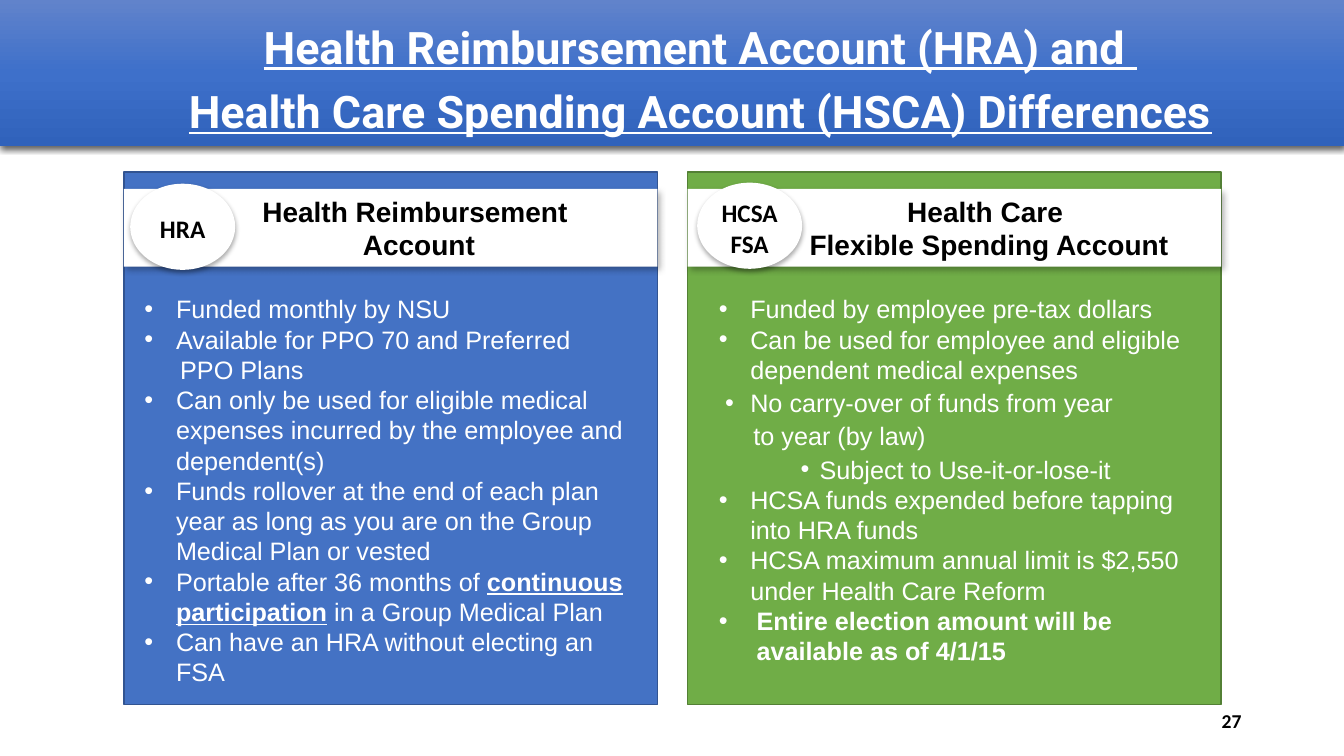
from copy import deepcopy
from dataclasses import dataclass

from lxml.etree import SubElement
from pptx import Presentation
from pptx.dml.color import RGBColor
from pptx.enum.shapes import MSO_SHAPE
from pptx.enum.text import MSO_ANCHOR, MSO_AUTO_SIZE, PP_ALIGN
from pptx.oxml.ns import qn
from pptx.util import Emu, Pt

WHITE, BLACK = "FFFFFF", "000000"
BLUE, BLUE_EDGE = "4472C4", "325491"
GREEN, GREEN_EDGE = "70AD47", "538035"


def px(length):
    return Emu(length * 9525)


def colour(hex_string):
    return RGBColor.from_string(hex_string)


@dataclass
class Item:
    """One list paragraph; words between asterisks are bold and underlined."""
    text: str
    left: int = 30
    hang: int = 30
    spacing: float = 1.0
    bullet: bool = True
    bold: bool = False
    level: int = 0


class SlideBuilder:
    heading_font, body_font, label_font = "Roboto", "Arial", "Calibri"

    def __init__(self, slide):
        self.slide = slide

    def place(self, shape, left, top, width, height):
        shape.left, shape.top = px(left), px(top)
        shape.width, shape.height = px(width), px(height)

    def shadow(self, shape, alpha, blur, distance, angle):
        shape.shadow.inherit = False
        effects = shape._element.spPr.find(qn("a:effectLst"))
        outer = SubElement(effects, qn("a:outerShdw"), blurRad=str(Pt(blur)),
                           dist=str(Pt(distance)), dir=str(angle * 60000),
                           algn="t", rotWithShape="0")
        tint = SubElement(outer, qn("a:srgbClr"), val=BLACK)
        SubElement(tint, qn("a:alpha"), val=str(alpha * 1000))

    def shape(self, kind, box, fill, edge=None):
        shape = self.slide.shapes.add_shape(kind, *map(px, box))
        shape.shadow.inherit = False
        shape.fill.solid()
        shape.fill.fore_color.rgb = colour(fill)
        if edge:
            shape.line.color.rgb = colour(edge)
            shape.line.width = Pt(1)
        else:
            shape.line.fill.background()
        return shape

    def style(self, paragraph, font, size, text_colour, bold=True):
        paragraph.font.name = font
        paragraph.font.size = Pt(size)
        paragraph.font.bold = bold
        paragraph.font.color.rgb = colour(text_colour)

    def lines(self, shape, lines, font, size, text_colour=BLACK, indent=0,
              align=PP_ALIGN.CENTER, wrap=True):
        frame = shape.text_frame
        frame.text = "\n".join(lines)
        frame.word_wrap = wrap
        frame.auto_size = MSO_AUTO_SIZE.NONE
        frame.vertical_anchor = MSO_ANCHOR.MIDDLE
        for paragraph in frame.paragraphs:
            paragraph.alignment = align
            paragraph._p.get_or_add_pPr().set("marL", str(px(indent)))
            self.style(paragraph, font, size, text_colour)
        return frame

    def title(self, box, lines, gradient):
        title = self.slide.shapes.title
        self.place(title, *box)
        title.fill.gradient()
        title.fill.gradient_angle = 270
        stops = title._element.spPr.find(".//" + qn("a:gsLst"))
        stops.append(deepcopy(stops[0]))
        for number, (stop, hue) in enumerate(zip(title.fill.gradient_stops, gradient)):
            stop.position = number / 2
            stop.color.rgb = colour(hue)
        self.shadow(title, 63, 4.5, 1.5, 90)
        frame = self.lines(title, lines, self.heading_font, 32, WHITE, indent=54)
        for paragraph in frame.paragraphs:
            paragraph.line_spacing = 1.2
            paragraph.font.underline = True

    def panel(self, left, fill, edge, heading, indent):
        self.shape(MSO_SHAPE.RECTANGLE, (left, 164, 508, 507), fill, edge)
        strip = self.shape(MSO_SHAPE.RECTANGLE, (left, 180, 508, 74), WHITE)
        self.shadow(strip, 30, 4.5, 2.6, 53)
        self.lines(strip, heading, self.body_font, 20, indent=indent)

    def badge(self, left, top, lines):
        badge = self.shape(MSO_SHAPE.FLOWCHART_CONNECTOR, (left, top, 100, 82), WHITE)
        self.shadow(badge, 32, 3.5, 2.2, 90)
        frame = self.lines(badge, lines, self.label_font, 18, wrap=False)
        frame.margin_left = frame.margin_right = 0
        frame.margin_top, frame.margin_bottom = px(4), 0

    def bullets(self, placeholder, box, items):
        # Bring the list in front of its panel
        self.slide.shapes._spTree.append(placeholder._element)
        self.place(placeholder, *box)
        frame = placeholder.text_frame
        frame.word_wrap = True
        frame.auto_size = MSO_AUTO_SIZE.NONE
        frame.vertical_anchor = MSO_ANCHOR.TOP
        for number, item in enumerate(items):
            paragraph = frame.add_paragraph() if number else frame.paragraphs[0]
            paragraph.level = item.level
            properties = paragraph._p.get_or_add_pPr()
            properties.set("marL", str(px(item.left)))
            properties.set("indent", str(-px(item.hang)))
            if item.bullet:
                SubElement(properties, qn("a:buFont"), typeface=self.body_font)
                SubElement(properties, qn("a:buChar"), char="•")
            else:
                SubElement(properties, qn("a:buNone"))
            paragraph.alignment = PP_ALIGN.LEFT
            paragraph.space_before = Pt(0)
            paragraph.line_spacing = item.spacing
            self.style(paragraph, self.body_font, 18, WHITE, item.bold)
            for part, words in enumerate(item.text.split("*")):
                run = paragraph.add_run()
                run.text = words
                if part % 2:
                    run.font.bold = run.font.underline = True

    def page_number(self, box, number):
        page = self.slide.shapes.add_textbox(*map(px, box))
        self.lines(page, [number], self.label_font, 14, align=PP_ALIGN.RIGHT)


def main():
    deck = Presentation()
    deck.slide_width, deck.slide_height = px(1280), px(720)
    slide = deck.slides.add_slide(deck.slide_layouts[3])
    builder = SlideBuilder(slide)
    hra_list, hcsa_list = slide.placeholders[1], slide.placeholders[2]

    # Heading band
    builder.title((0, 0, 1280, 139),
                  ["Health Reimbursement Account (HRA) and ",
                   "Health Care Spending Account (HSCA) Differences"],
                  ["6183CB", "3E70CA", "3062BB"])

    # Health Care Flexible Spending Account
    builder.panel(655, GREEN, GREEN_EDGE,
                  ["Health Care ", "Flexible Spending Account"], 66)
    builder.badge(664, 174, ["HCSA", "FSA"])
    builder.bullets(hcsa_list, (675, 275, 487, 422), [
        Item("Funded by employee pre-tax dollars"),
        Item("Can be used for employee and eligible dependent medical expenses"),
        Item("No carry-over of funds from year", hang=24, spacing=1.1),
        Item("to year (by law)", left=33, hang=0, spacing=1.1, bullet=False),
        Item("Subject to Use-it-or-lose-it", left=96, hang=18, spacing=1.1, level=1),
        Item("HCSA funds expended before tapping into HRA funds"),
        Item("HCSA maximum annual limit is $2,550 under Health Care Reform"),
        Item("Entire election amount will be available as of 4/1/15",
             left=36, hang=36, bold=True),
    ])

    # Health Reimbursement Account
    builder.panel(118, BLUE, BLUE_EDGE, ["Health Reimbursement ", "Account"], 54)
    builder.badge(124, 175, ["HRA"])
    builder.bullets(hra_list, (128, 275, 497, 388), [
        Item("Funded monthly by NSU"),
        Item("Available for PPO 70 and Preferred"),
        Item("PPO Plans", left=34, hang=0, bullet=False),
        Item("Can only be used for eligible medical expenses incurred by "
             "the employee and dependent(s)"),
        Item("Funds rollover at the end of each plan year as long as you are "
             "on the Group Medical Plan or vested"),
        Item("Portable after 36 months of *continuous* *participation* "
             "in a Group Medical Plan"),
        Item("Can have an HRA without electing an FSA"),
    ])

    builder.page_number((904, 667, 288, 38), "27")
    deck.save("out.pptx")


if __name__ == "__main__":
    main()
